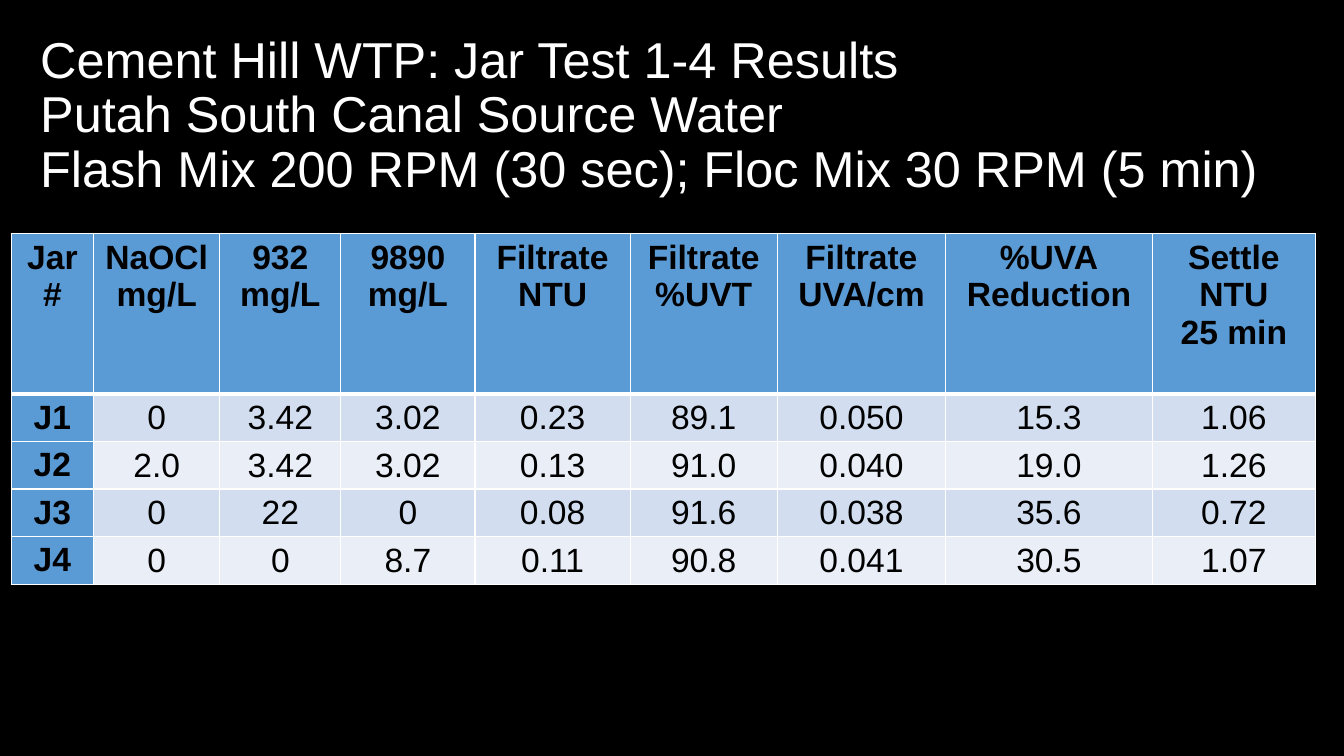
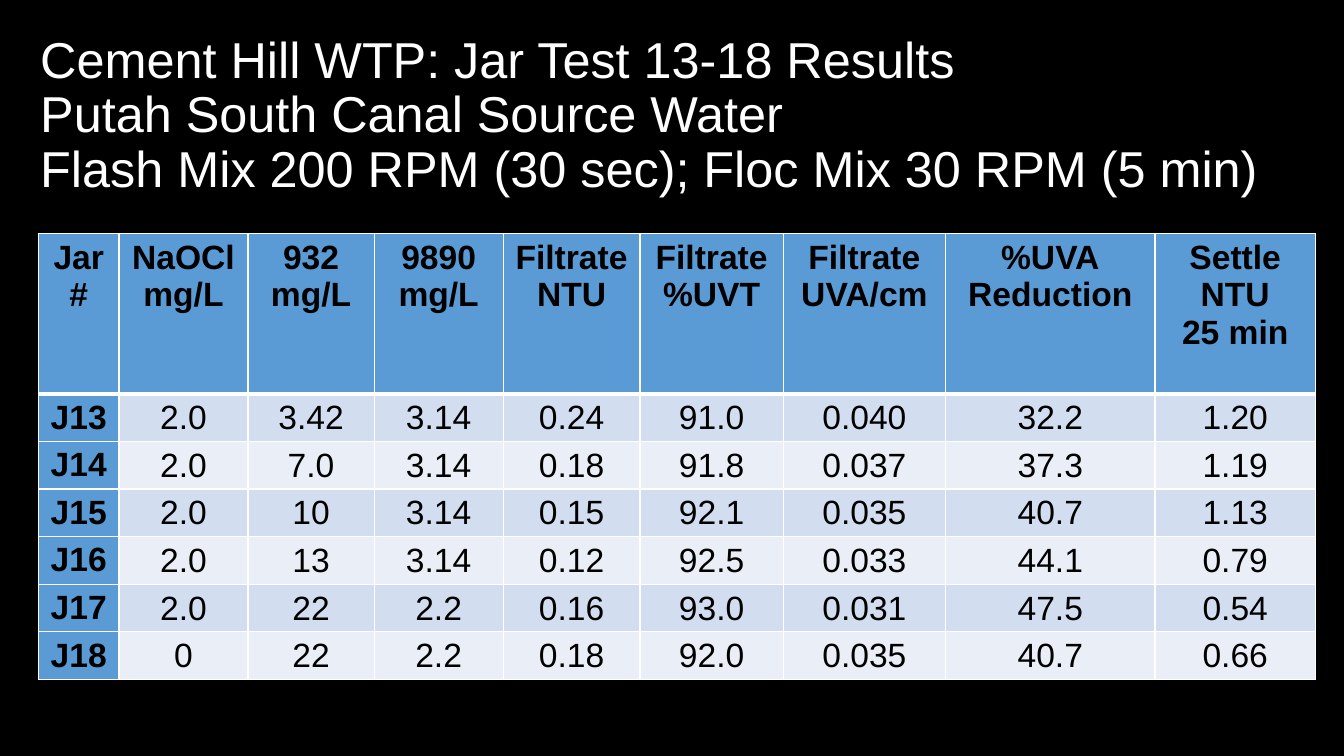
"""Build two slides of jar test results, each a title over a table."""
from lxml.etree import SubElement as Sub
from pptx import Presentation
from pptx.dml.color import RGBColor
from pptx.enum.text import MSO_ANCHOR as Anchor, MSO_AUTO_SIZE as Fit, PP_ALIGN as Align
from pptx.oxml.ns import qn
from pptx.util import Cm, Pt

BLACK = RGBColor(0x00, 0x00, 0x00)
WHITE = RGBColor(0xFF, 0xFF, 0xFF)
BLUE = RGBColor(0x5B, 0x9B, 0xD5)
BANDS = RGBColor(0xD2, 0xDE, 0xEF), RGBColor(0xEA, 0xEF, 0xF7)
FONT = "Arial"
TOP, HEAD, ROW = 5.89, 4.03, 1.2

HEADS = ["Jar\n#", "NaOCl\nmg/L", "932\nmg/L", "9890\nmg/L", "Filtrate\nNTU",
         "Filtrate\n%UVT", "Filtrate\nUVA/cm", "%UVA\nReduction",
         "Settle\nNTU\n25 min"]

TESTS = [
    ("1-4", 0.28, [2.08, 3.18, 3.05, 3.38, 3.91, 3.71, 4.24, 5.21, 4.11], [
        ["J1", "0", "3.42", "3.02", "0.23", "89.1", "0.050", "15.3", "1.06"],
        ["J2", "2.0", "3.42", "3.02", "0.13", "91.0", "0.040", "19.0", "1.26"],
        ["J3", "0", "22", "0", "0.08", "91.6", "0.038", "35.6", "0.72"],
        ["J4", "0", "0", "8.7", "0.11", "90.8", "0.041", "30.5", "1.07"],
    ]),
    ("13-18", 0.97, [2.03, 3.25, 3.18, 3.25, 3.45, 3.61, 4.09, 5.28, 4.04], [
        ["J13", "2.0", "3.42", "3.14", "0.24", "91.0", "0.040", "32.2", "1.20"],
        ["J14", "2.0", "7.0", "3.14", "0.18", "91.8", "0.037", "37.3", "1.19"],
        ["J15", "2.0", "10", "3.14", "0.15", "92.1", "0.035", "40.7", "1.13"],
        ["J16", "2.0", "13", "3.14", "0.12", "92.5", "0.033", "44.1", "0.79"],
        ["J17", "2.0", "22", "2.2", "0.16", "93.0", "0.031", "47.5", "0.54"],
        ["J18", "0", "22", "2.2", "0.18", "92.0", "0.035", "40.7", "0.66"],
    ]),
]


def style(frame, size, color, align, bold=False):
    for para in frame.paragraphs:
        para.alignment = align
        for run in para.runs:
            run.font.name = FONT
            run.font.size = Pt(size)
            run.font.bold = bold
            run.font.color.rgb = color


def border(cell, side, width):
    line = Sub(cell._tc.get_or_add_tcPr(), qn(f"a:ln{side}"), w=str(Pt(width)))
    fill = Sub(line, qn("a:solidFill"))
    Sub(fill, qn("a:srgbClr"), val=str(WHITE))


prs = Presentation()
prs.slide_width, prs.slide_height = Cm(33.87), Cm(19.05)

master = prs.slide_master
master.background.fill.solid()
master.background.fill.fore_color.rgb = BLACK
level = master.element.find(f".//{qn('p:titleStyle')}/{qn('a:lvl1pPr')}")
level.find(qn("a:defRPr")).set("sz", "3600")

layout = prs.slide_layouts.get_by_name("Title Only")
base = layout.placeholders[0]
base.left, base.top, base.width, base.height = Cm(0.76), Cm(0.58), Cm(32.41), Cm(4.72)

for span, left, widths, rows in TESTS:
    slide = prs.slides.add_slide(layout)
    frame = slide.shapes.title.text_frame
    frame.paragraphs[0].text = (
        f"Cement Hill WTP: Jar Test {span} Results\v"
        "Putah South Canal Source Water\v"
        "Flash Mix 200 RPM (30 sec); Floc Mix 30 RPM (5 min)")
    frame.auto_size = Fit.NONE
    frame.vertical_anchor = Anchor.MIDDLE
    frame.paragraphs[0].line_spacing = 0.9
    style(frame, 36, WHITE, Align.LEFT)

    grid = [HEADS] + rows
    table = slide.shapes.add_table(
        len(grid), len(HEADS), Cm(left), Cm(TOP),
        Cm(sum(widths)), Cm(HEAD + ROW * len(rows))).table
    table.first_col = True
    for col, width in zip(table.columns, widths):
        col.width = Cm(width)
    for r, texts in enumerate(grid):
        table.rows[r].height = Cm(ROW if r else HEAD)
        for c, text in enumerate(texts):
            cell = table.cell(r, c)
            label = r == 0 or c == 0
            cell.text_frame.text = text
            style(cell.text_frame, 24, BLACK, Align.CENTER, label)
            if not label:
                cell.vertical_anchor = Anchor.MIDDLE
                cell.margin_left = cell.margin_right = cell.margin_top = Cm(0.03)
                cell.margin_bottom = 0
            for side in "LRTB":
                thick = (r, side) in [(0, "B"), (1, "T")]
                border(cell, side, 3 if thick else 1)
            cell.fill.solid()
            cell.fill.fore_color.rgb = BLUE if label else BANDS[(r - 1) % 2]

prs.save("out.pptx")
